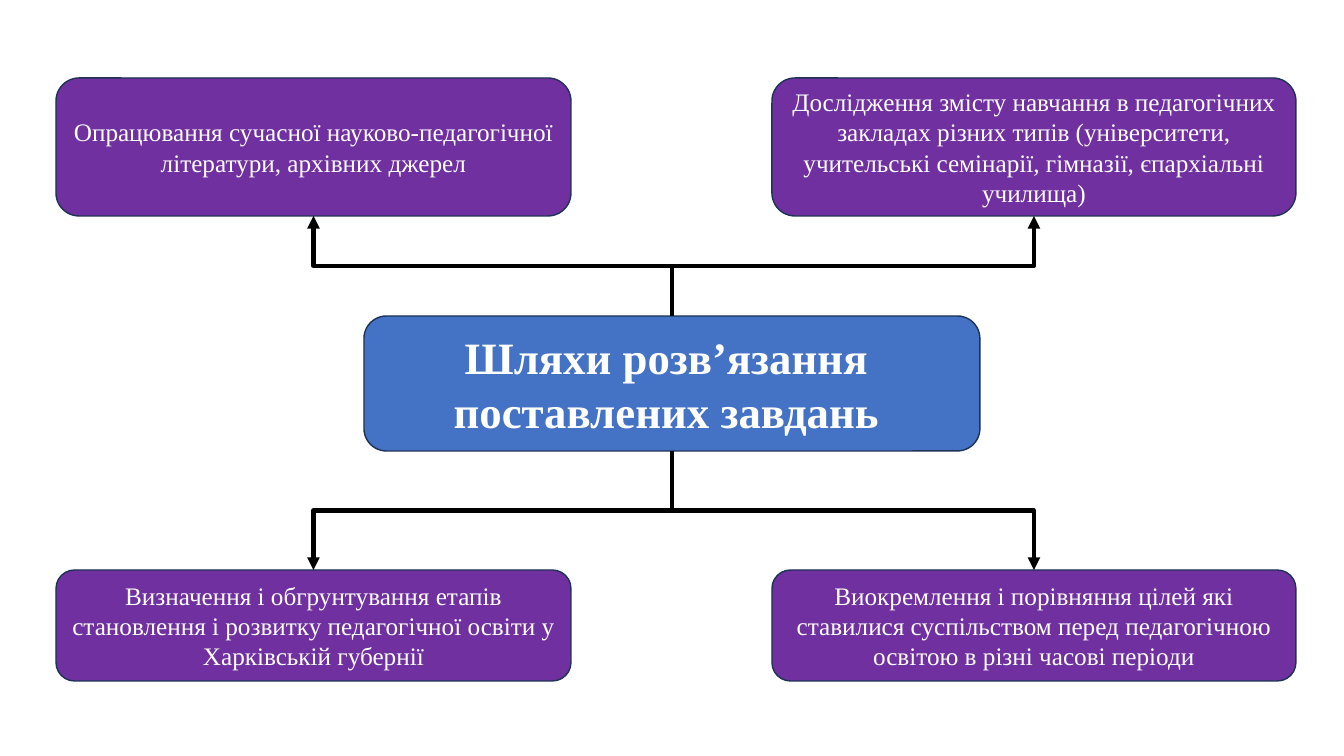
from lxml.etree import SubElement
from pptx import Presentation
from pptx.dml.color import RGBColor
from pptx.enum.shapes import MSO_CONNECTOR as CONNECTOR, MSO_SHAPE as SHAPE
from pptx.enum.text import MSO_ANCHOR as ANCHOR, PP_ALIGN as ALIGN
from pptx.oxml.ns import qn
from pptx.util import Pt

PX = 914400 / 100.8
COLORS = {"task": "7030A0", "title": "4472C4", "border": "1E3256", "text": "FFFFFF", "arrow": "000000"}
FONT = "Times New Roman"
TITLE = "Шляхи розв’язання \nпоставлених завдань "
TITLE_BOX = (364, 316, 616, 135)
COLUMNS = ((56, 515), (772, 524))
ROWS = (
    (78, 138, (
        "Опрацювання сучасної науково-педагогічної літератури, архівних джерел",
        "Дослідження змісту навчання в педагогічних закладах різних типів "
        "(університети, учительські семінарії, гімназії, єпархіальні училища)",
    )),
    (570, 111, (
        "Визначення і обгрунтування етапів становлення і розвитку педагогічної освіти у Харківській губернії",
        "Виокремлення і порівняння цілей які ставилися суспільством перед педагогічною освітою в різні часові періоди",
    )),
)


def px(length):
    """Turn pixels into EMU."""
    return round(length * PX)


def color(name):
    """Look up a named colour."""
    return RGBColor.from_string(COLORS[name])


def add_box(slide, box, text, fill, size, bold=False):
    """Place a rounded box with centred text."""
    shape = slide.shapes.add_shape(SHAPE.ROUNDED_RECTANGLE, *map(px, box))
    shape.shadow.inherit = False
    shape.fill.solid()
    shape.fill.fore_color.rgb = color(fill)
    shape.line.color.rgb = color("border")
    shape.line.width = Pt(1)
    frame = shape.text_frame
    frame.word_wrap = True
    frame.vertical_anchor = ANCHOR.MIDDLE
    frame.text = text
    for paragraph in frame.paragraphs:
        paragraph.alignment = ALIGN.CENTER
        for run in paragraph.runs:
            run.font.name = FONT
            run.font.size = Pt(size)
            run.font.bold = bold
            run.font.color.rgb = color("text")
    return shape


def add_branch(slide, title, task):
    """Join the title to a task with an elbow arrow that leaves vertically."""
    upward = task.top < title.top
    leftward = task.left < title.left
    start_x = title.left + title.width // 2
    end_x = task.left + task.width // 2
    start_y = title.top if upward else title.top + title.height
    end_y = task.top + task.height if upward else task.top

    connector = slide.shapes.add_connector(CONNECTOR.ELBOW, start_x, start_y, end_x, end_y)
    connector.begin_connect(title, 0 if upward else 2)
    connector.end_connect(task, 2 if upward else 0)

    width, height = abs(end_y - start_y), abs(end_x - start_x)
    connector.left = (start_x + end_x - width) // 2
    connector.top = (start_y + end_y - height) // 2
    connector.width, connector.height = width, height
    properties = connector._element.spPr
    transform = properties.find(qn("a:xfrm"))
    transform.set("rot", str((270 if upward == leftward else 90) * 60000))
    transform.set("flipH", str(int(not leftward)))
    transform.set("flipV", str(int(upward)))

    connector.line.color.rgb = color("arrow")
    connector.line.width = Pt(3)
    SubElement(properties.find(qn("a:ln")), qn("a:tailEnd"), type="triangle")
    SubElement(properties, qn("a:effectLst"))


def add_diagram(slide):
    """Place the title, the four tasks and the arrows between them."""
    title = add_box(slide, TITLE_BOX, TITLE, "title", 32, bold=True)
    for top, height, texts in ROWS:
        for (left, width), text in zip(COLUMNS, texts):
            task = add_box(slide, (left, top, width, height), text, "task", 18)
            add_branch(slide, title, task)


def main():
    """Build and save the presentation."""
    presentation = Presentation()
    presentation.slide_width, presentation.slide_height = px(1344), px(756)
    add_diagram(presentation.slides.add_slide(presentation.slide_layouts[6]))
    presentation.save("out.pptx")


if __name__ == "__main__":
    main()
